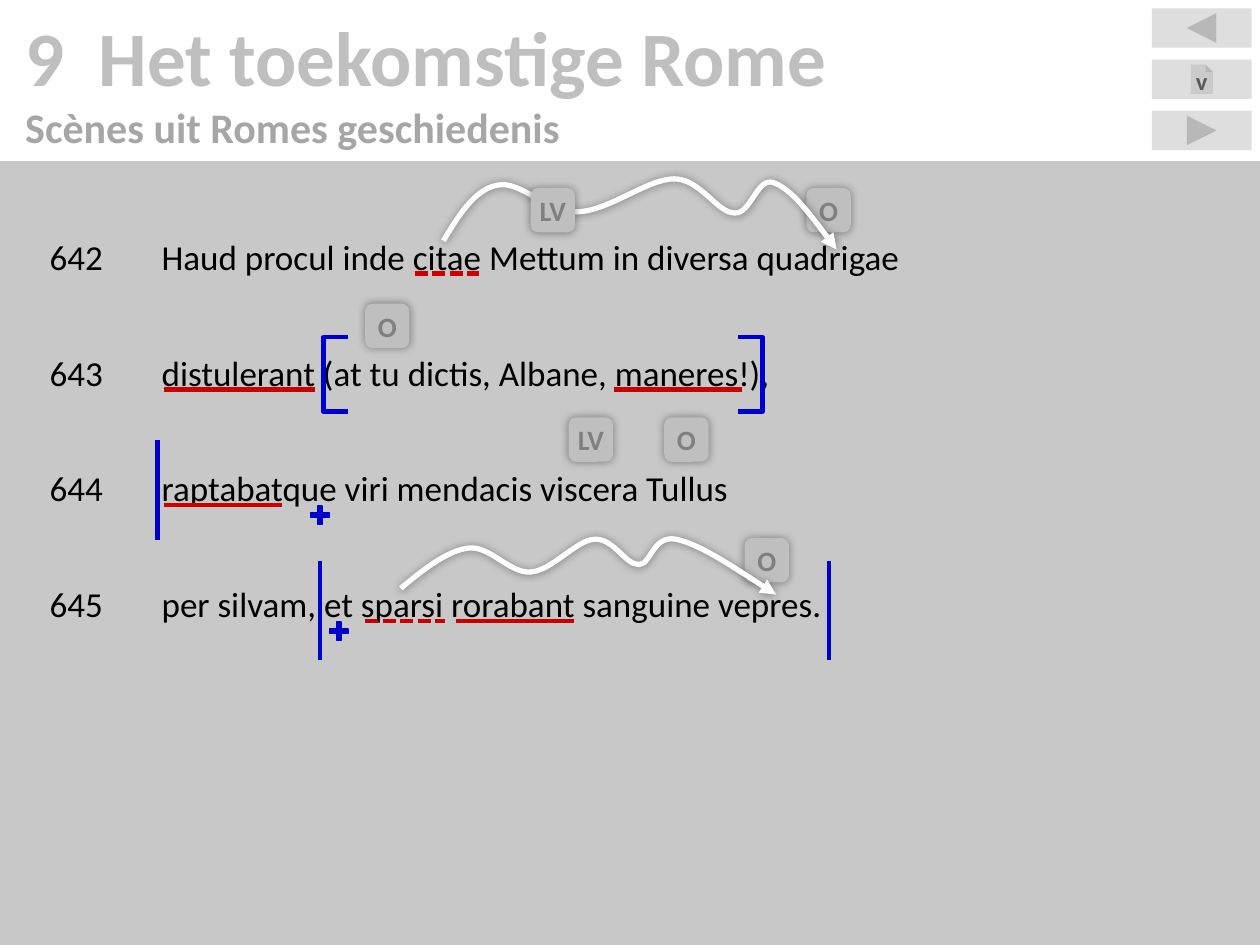
from lxml import etree
from pptx import Presentation
from pptx import util as u
from pptx.dml.color import RGBColor
from pptx.enum import dml, shapes, text
from pptx.oxml.ns import qn

FONT = "Calibri"
GREY, RED, BLUE, WHITE = "BFBFBF", "CC0000", "0000CC", "FFFFFF"
ROW_TOP, ROW_STEP = 156.25, 66.25  # underline height of the first verse, verse pitch
BAR_HEIGHT = 57
CHIP = 25.4

VERSES = [
    ("642", "Haud procul inde citae Mettum in diversa quadrigae"),
    ("643", "distulerant (at tu dictis, Albane, maneres!),"),
    ("644", "raptabatque viri mendacis viscera Tullus"),
    ("645", "per silvam, et sparsi rorabant sanguine vepres."),
]
# verse row, left, right, dashed
UNDERLINES = [
    (1, 93.6, 180, False), (0, 237, 273.6, True), (1, 350.6, 424, False),
    (2, 93.6, 161.3, False), (3, 208.8, 254.2, True), (3, 260.6, 328.3, False),
]
BARS = [(473.75, 320.4), (90, 251.3), (182.9, 320.4)]
PLUSES = [(175.7, 287.3), (186.5, 353.5)]
# start point, then two handles and an end point for each bend
CITAE_ARROW = [
    (253.4, 137.5),
    (262.1, 123.1), (271.4, 108), (284.4, 105.8),
    (297.4, 103), (313.2, 121.7), (329.8, 121),
    (347, 121), (370.1, 102.2), (385.2, 102.2),
    (400.3, 102.2), (409.7, 121.7), (419.8, 121.7),
    (429.1, 122.4), (432.7, 100.8), (442.1, 104.4),
    (452.2, 108), (465.1, 125.3), (478.1, 142.6),
]
SPARSI_ARROW = [
    (229, 336.2),
    (241.9, 325.4), (255.6, 314.6), (267.8, 313.2),
    (280.1, 311.8), (290.9, 327.6), (303.1, 326.9),
    (315.4, 326.2), (329.8, 308.2), (339.8, 308.2),
    (350.6, 307.4), (357.1, 322.6), (365, 322.6),
    (372.2, 322.6), (373, 305.3), (386.6, 308.2),
    (399.6, 311), (421.2, 325.4), (443.5, 339.8),
]


def colour(value):
    return RGBColor.from_string(value)


def element(parent, tag, **attributes):
    return etree.SubElement(parent, qn(tag), {k: str(v) for k, v in attributes.items()})


def paint(shape, value, opacity=100):
    shape.fill.solid()
    shape.fill.fore_color.rgb = colour(value)
    if opacity < 100:
        rgb = shape.fill._xPr.find(qn("a:solidFill"))[0]
        element(rgb, "a:alpha", val=opacity * 1000)


def stroke(shape, value, width):
    shape.line.color.rgb = colour(value)
    shape.line.width = u.Pt(width)


def glow(shape):
    """Soft dark shadow all round the shape."""
    effects = shape._element.spPr.find(qn("a:effectLst"))
    shadow = element(effects, "a:outerShdw", blurRad=u.Pt(5), dist=0, dir=0,
                     algn="ctr", rotWithShape=0)
    rgb = element(shadow, "a:srgbClr", val="000000")
    element(rgb, "a:alpha", val=40000)


def place(shape, left, top, width, height):
    shape.left, shape.top = u.Pt(left), u.Pt(top)
    shape.width, shape.height = u.Pt(width), u.Pt(height)


def set_frame(shape, side, top, anchor):
    frame = shape.text_frame
    frame.word_wrap = True
    frame.auto_size = text.MSO_AUTO_SIZE.NONE
    frame.margin_left = frame.margin_right = u.Pt(side)
    frame.margin_top = frame.margin_bottom = u.Pt(top)
    frame.vertical_anchor = anchor
    return frame


def add_span(para, words, size, value, bold=False):
    span = para.add_run()
    span.text = words
    font = span.font
    font.name, font.size, font.bold = FONT, u.Pt(size), bold
    font.color.rgb = colour(value)


def next_para(frame, index, hang):
    """Paragraph whose first tab lands on its hanging indent."""
    para = frame.paragraphs[0] if index == 0 else frame.add_paragraph()
    para.alignment = text.PP_ALIGN.LEFT
    para.space_before = u.Pt(0)
    props = para._p.get_or_add_pPr()
    props.set("marL", str(u.Pt(hang)))
    props.set("indent", str(-u.Pt(hang)))
    return para


def fill_title(title):
    place(title, 0, 0, 720, 92)
    frame = set_frame(title, 14.4, 14.4, text.MSO_ANCHOR.MIDDLE)
    lines = [("9\tHet toekomstige Rome", 44, GREY),
             ("Scènes uit Romes geschiedenis", 24, "A6A6A6")]
    for index, (words, size, value) in enumerate(lines):
        add_span(next_para(frame, index, 42), words, size, value, bold=True)


def fill_verses(body):
    place(body, 0, 92, 720, 448)
    paint(body, GREY, 85)
    frame = set_frame(body, 28.35, 42.6, text.MSO_ANCHOR.TOP)
    for index, (number, verse) in enumerate(VERSES):
        para = next_para(frame, index, 64)
        para.space_after = u.Pt(42)
        element(para._p.get_or_add_pPr(), "a:buNone")
        add_span(para, f"{number}\t{verse}", 20, "000000")


def add_block(page, kind, box, value, opacity=100):
    shape = page.shapes.add_shape(kind, *(u.Pt(n) for n in box))
    shape.shadow.inherit = False
    shape.line.fill.background()
    paint(shape, value, opacity)
    return shape


def add_label(shape, words, size, value, anchor, side=0, top=0):
    para = set_frame(shape, side, top, anchor).paragraphs[0]
    para.alignment = text.PP_ALIGN.CENTER
    add_span(para, words, size, value, bold=True)


def add_chip(page, words, left, top):
    chip = add_block(page, shapes.MSO_SHAPE.ROUNDED_RECTANGLE, (left, top, CHIP, CHIP), GREY)
    glow(chip)
    add_label(chip, words, 16, "808080", text.MSO_ANCHOR.MIDDLE)


def add_line(page, start, end, value, dashed=False):
    line = page.shapes.add_connector(shapes.MSO_CONNECTOR.STRAIGHT,
                                     *(u.Pt(n) for n in start + end))
    stroke(line, value, 2.5)
    if dashed:
        line.line.dash_style = dml.MSO_LINE.SQUARE_DOT
    element(line._element.spPr, "a:effectLst")


def add_outline(page, points, value, width):
    first, *rest = [(u.Pt(x), u.Pt(y)) for x, y in points]
    builder = page.shapes.build_freeform(*first)
    builder.add_line_segments(rest, close=False)
    outline = builder.convert_to_shape()
    outline.shadow.inherit = False
    outline.fill.background()
    stroke(outline, value, width)
    return outline


def add_curved_arrow(page, points):
    arrow = add_outline(page, points, WHITE, 3)
    glow(arrow)
    # Turn each three straight segments into one Bézier bend
    track = next(arrow._element.iter(qn("a:path")))
    segments = track.findall(qn("a:lnTo"))
    for first in range(0, len(segments), 3):
        bend = element(track, "a:cubicBezTo")
        for segment in segments[first:first + 3]:
            bend.append(segment[0])
            track.remove(segment)
    element(arrow.line._get_or_add_ln(), "a:tailEnd", type="triangle")


def main():
    deck = Presentation()
    deck.slide_width, deck.slide_height = u.Pt(720), u.Pt(540)
    page = deck.slides.add_slide(deck.slide_layouts[1])
    fill_title(page.shapes.title)
    fill_verses(page.placeholders[1])

    # Navigation buttons
    preset = shapes.MSO_SHAPE
    kinds = [preset.ACTION_BUTTON_BACK_OR_PREVIOUS, preset.ACTION_BUTTON_DOCUMENT,
             preset.ACTION_BUTTON_FORWARD_OR_NEXT]
    buttons = [add_block(page, kind, (658.2, 4.8 + 29.25 * i, 57, 22.5), GREY, 50)
               for i, kind in enumerate(kinds)]
    add_label(buttons[1], "v", 14, "595959", text.MSO_ANCHOR.TOP, 7.2, 3.6)

    # Verb and participle underlines, clause brackets and bars
    for row, left, right, dashed in UNDERLINES:
        y = ROW_TOP + ROW_STEP * row
        add_line(page, (left, y), (right, y), RED, dashed)
    for edge, tip in [(184.8, 198.9), (435.8, 421.6)]:
        add_outline(page, [(tip, 192.7), (edge, 192.7), (edge, 235.2), (tip, 235.2)], BLUE, 2.5)
    for x, top in BARS:
        add_line(page, (x, top), (x, top + BAR_HEIGHT), BLUE)
    for left, top in PLUSES:
        plus = add_block(page, preset.MATH_PLUS, (left, top, 14.4, 14.4), BLUE)
        plus.adjustments[0] = 0.17
        stroke(plus, BLUE, 0)

    # Grammar chips and agreement arrows
    add_chip(page, "O", 460.8, 107.4)
    add_curved_arrow(page, CITAE_ARROW)
    for words, left, top in [("LV", 303.2, 107.4), ("O", 208.6, 173.6), ("O", 379.6, 238.5),
                             ("LV", 325, 238.5), ("O", 425.5, 307.5)]:
        add_chip(page, words, left, top)
    add_curved_arrow(page, SPARSI_ARROW)
    deck.save("out.pptx")


if __name__ == "__main__":
    main()
